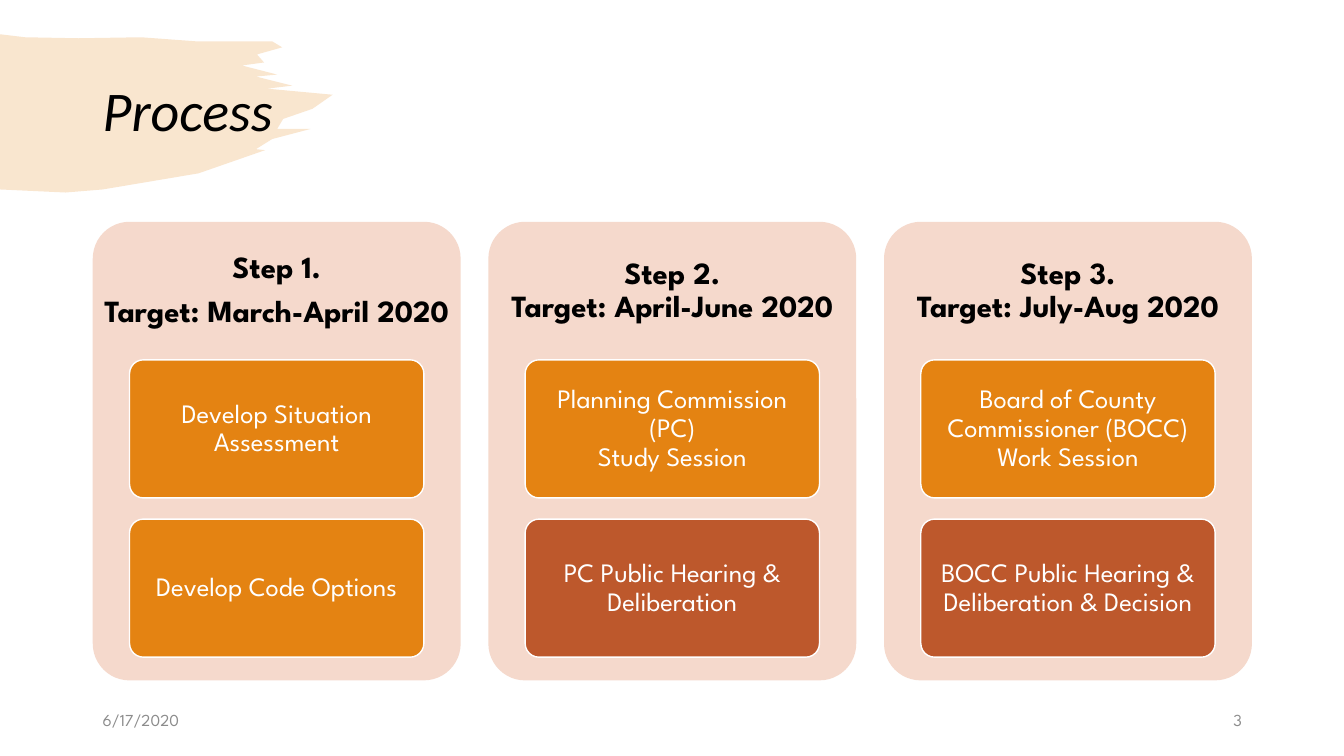
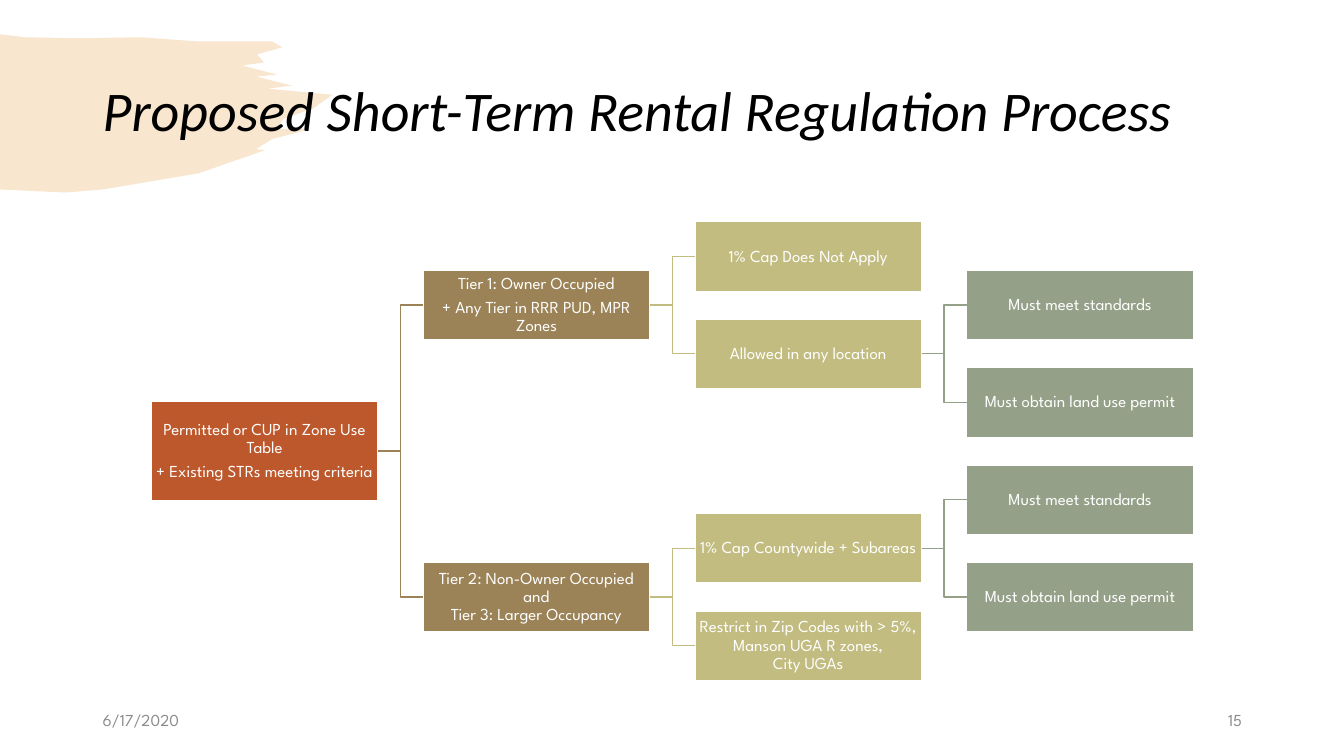
"""Build two slides on the short-term rental process: the steps and the regulation tree."""
from dataclasses import dataclass

from lxml import etree
from pptx import Presentation
from pptx import util as u
from pptx.dml.color import RGBColor
from pptx.enum import shapes, text
from pptx.oxml.ns import qn

PX = 9144


@dataclass(frozen=True)
class Theme:
    title_font: str = "Calibri"
    body_font: str = "League Spartan"
    title_size: int = 40
    header_size: int = 22
    card_size: int = 19
    small_size: int = 12
    black: str = "000000"
    white: str = "FFFFFF"
    grey: str = "8C8C8C"
    panel: str = "F5D9CC"
    orange: str = "E48312"
    rust: str = "BD582C"
    brown: str = "9B8357"
    khaki: str = "C2BC80"
    sage: str = "94A088"


T = Theme()
DATE = "6/17/2020"

STEPS = [
    (["Step 1.", "Target: March-April 2020"],
     [("Develop Situation Assessment", T.orange),
      ("Develop Code Options", T.orange)]),
    (["Step 2.\nTarget: April-June 2020"],
     [("Planning Commission (PC)\nStudy Session", T.orange),
      ("PC Public Hearing & Deliberation", T.rust)]),
    (["Step 3.\nTarget: July-Aug 2020"],
     [("Board of County Commissioner (BOCC) Work Session", T.orange),
      ("BOCC Public Hearing & Deliberation & Decision", T.rust)]),
]

TREE_COLOURS = [T.rust, T.brown, T.khaki, T.sage]
LEAVES = [["Must meet standards"], ["Must obtain land use permit"]]
TREE = (4, ["Permitted or CUP in Zone Use Table", "+ Existing STRs meeting criteria"], [
    (1, ["Tier 1: Owner Occupied", "+ Any Tier in RRR PUD, MPR Zones"], [
        (0, ["1% Cap Does Not Apply"], []),
        (2, ["Allowed in any location"], LEAVES),
    ]),
    (7, ["Tier 2: Non-Owner Occupied and\nTier 3: Larger Occupancy"], [
        (6, ["1% Cap Countywide + Subareas"], LEAVES),
        (8, ["Restrict in Zip Codes with > 5%, Manson UGA R zones,\nCity UGAs"], []),
    ]),
])

BRUSH = [
    (0, 34), (25, 37), (78, 38), (140, 37), (194, 41), (270, 41), (280, 47),
    (255, 54), (262, 62), (240, 65), (275, 74), (254, 76), (290, 85),
    (265, 88), (330, 94), (310, 108), (281, 118), (275, 128), (308, 128),
    (270, 138), (254, 148), (263, 149), (197, 172), (102, 188), (65, 191), (0, 188),
]


def px(*lengths):
    return [u.Emu(round(n * PX)) for n in lengths]


def rgb(colour):
    return RGBColor.from_string(colour)


def write(sp, paragraphs, size, colour, font=T.body_font, bold=False, italic=False,
          align=text.PP_ALIGN.CENTER, inset=(10, 5), gap=0.35):
    tf = sp.text_frame
    tf.word_wrap = True
    tf.vertical_anchor = text.MSO_ANCHOR.MIDDLE
    tf.margin_left = tf.margin_right = px(inset[0])[0]
    tf.margin_top = tf.margin_bottom = px(inset[1])[0]
    for i, line in enumerate(paragraphs):
        p = tf.add_paragraph() if i else tf.paragraphs[0]
        p.text = line
        p.alignment = align
        p.line_spacing = 0.9
        p.space_after = u.Pt(size * gap)
        f = p.font
        f.name, f.size, f.bold, f.italic = font, u.Pt(size), bold, italic
        f.color.rgb = rgb(colour)


def add_text(s, box, paragraphs, size, colour, **style):
    write(s.shapes.add_textbox(*px(*box)), paragraphs, size, colour, **style)


def paint(sp, fill, line=None):
    sp.shadow.inherit = False
    sp.fill.solid()
    sp.fill.fore_color.rgb = rgb(fill)
    if line:
        sp.line.color.rgb = rgb(line)
        sp.line.width = u.Pt(1)
    else:
        sp.line.fill.background()


def add_box(s, kind, box, fill, line=None):
    sp = s.shapes.add_shape(kind, *px(*box))
    paint(sp, fill, line)
    return sp


def add_rounded(s, box, fill, line=None):
    sp = add_box(s, shapes.MSO_SHAPE.ROUNDED_RECTANGLE, box, fill, line)
    sp.adjustments[0] = 0.1
    return sp


def add_brush(s):
    builder = s.shapes.build_freeform(*BRUSH[0], scale=PX and 1 / (1 / PX))
    builder.add_line_segments(BRUSH[1:], close=True)
    sp = builder.convert_to_shape()
    paint(sp, T.orange)
    colour = sp._element.spPr.find(".//" + qn("a:srgbClr"))
    etree.SubElement(colour, qn("a:alpha"), val="20000")


def add_slide(prs, title, number):
    s = prs.slides.add_slide(prs.slide_layouts[6])
    left, right = text.PP_ALIGN.LEFT, text.PP_ALIGN.RIGHT
    add_brush(s)
    add_text(s, (92, 40, 1150, 145), [title], T.title_size, T.black,
             font=T.title_font, italic=True, align=left, gap=0)
    for x, label, align in ((92, DATE, left), (942, number, right)):
        add_text(s, (x, 695, 300, 40), [label], T.small_size, T.grey, align=align, gap=0)
    return s


def add_steps(s):
    left, top, total, width, height = 92, 220, 1150, 365, 455
    card_w, card_h, card_top, card_pitch = 292, 137, 357, 158
    pitch = (total - width) / (len(STEPS) - 1)
    for i, (header, cards) in enumerate(STEPS):
        x = left + i * pitch
        add_rounded(s, (x, top, width, height), T.panel)
        add_text(s, (x, top, width, card_top - top), header, T.header_size, T.black,
                 bold=True, inset=(9, 9))
        for j, (label, fill) in enumerate(cards):
            box = (x + (width - card_w) / 2, card_top + j * card_pitch, card_w, card_h)
            write(add_rounded(s, box, fill, T.white), [label], T.card_size, T.white,
                  inset=(5, 4))


def add_branch(s, parent, child, colour):
    cn = s.shapes.add_connector(shapes.MSO_CONNECTOR.ELBOW, 0, 0, 0, 0)
    cn.begin_connect(parent, 3)
    cn.end_connect(child, 1)
    cn.line.color.rgb = rgb(colour)
    cn.line.width = u.Pt(1)
    etree.SubElement(cn._element.spPr, qn("a:effectLst"))


def add_node(s, node, column=0, parent=None):
    left, pitch, width = 150, 269.67, 225
    first_middle, half_row = 254.5, 48.25
    row, paragraphs, children = node
    height = 69 if parent else 99
    box = (left + column * pitch, first_middle + row * half_row - height / 2, width, height)
    sp = add_box(s, shapes.MSO_SHAPE.RECTANGLE, box, TREE_COLOURS[column], T.white)
    write(sp, paragraphs, T.small_size, T.white, inset=(1, 1))
    if parent:
        add_branch(s, parent, sp, TREE_COLOURS[column])
    if children is LEAVES:
        children = [(row - 1 + 2 * i, leaf, []) for i, leaf in enumerate(LEAVES)]
    for child in children:
        add_node(s, child, column + 1, sp)


def main():
    prs = Presentation()
    prs.slide_width, prs.slide_height = px(1333.33, 750)
    add_steps(add_slide(prs, "Process", "3"))
    add_node(add_slide(prs, "Proposed Short-Term Rental Regulation Process", "15"), TREE)
    prs.save("out.pptx")


if __name__ == "__main__":
    main()
